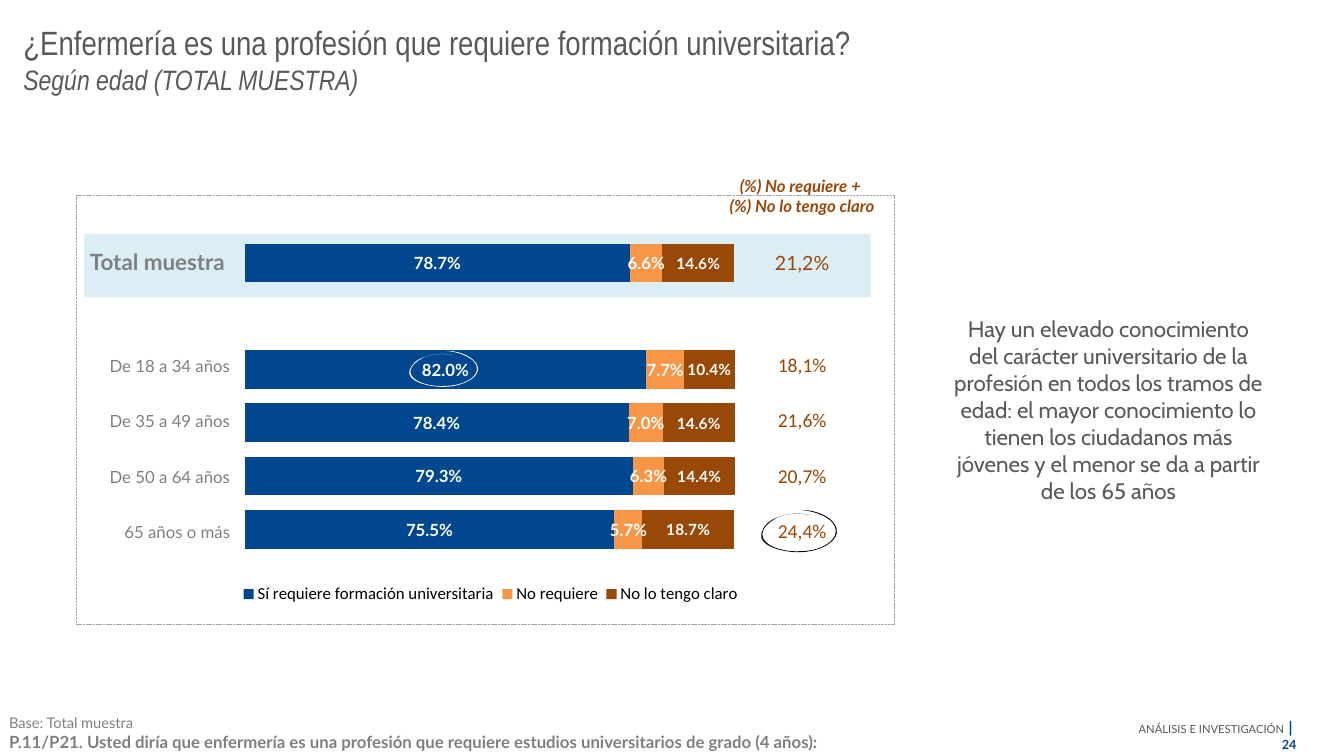
from dataclasses import dataclass
from typing import Any

from lxml.etree import SubElement as Sub
from pptx import Presentation
from pptx.chart.data import CategoryChartData as Data
from pptx.dml.color import RGBColor
from pptx.enum.chart import XL_CHART_TYPE as Kind
from pptx.enum.chart import XL_LABEL_POSITION as Spot
from pptx.enum.chart import XL_LEGEND_POSITION as Side
from pptx.enum.dml import MSO_LINE as Dash
from pptx.enum.shapes import MSO_SHAPE as Form
from pptx.enum.text import MSO_ANCHOR as Anchor
from pptx.enum.text import PP_ALIGN as Align
from pptx.oxml.ns import qn
from pptx.util import Cm, Pt

BLUE = RGBColor(0x00, 0x47, 0x8F)
ORANGE = RGBColor(0xF7, 0x96, 0x46)
BROWN = RGBColor(0x98, 0x48, 0x07)
GRAY = RGBColor(0x80, 0x80, 0x80)
DARK = RGBColor(0x59, 0x59, 0x59)
EDGE = RGBColor(0xA6, 0xA6, 0xA6)
PALE = RGBColor(0xDB, 0xEE, 0xF4)
WHITE = RGBColor(0xFF, 0xFF, 0xFF)
BLACK = RGBColor(0x00, 0x00, 0x00)
BARE = "{2D5ABB26-0587-4C30-8999-92F81FD0307C}"

RING = [(52, 5), (41, 3), (30, 3), (20, 7), (11, 10), (5, 16), (3, 23),
        (0, 36), (24, 42), (40, 42), (58, 42), (76, 34), (78, 23),
        (80, 11), (62, 0), (43, 0), (42, 0), (42, 0), (43, 0),
        (61, 2), (78, 10), (77, 22), (76, 33), (59, 41), (42, 41),
        (25, 42), (4, 36), (4, 24), (4, 18), (11, 12), (18, 8),
        (28, 3), (40, 3), (52, 5)]


@dataclass
class Box:
    x: float
    y: float
    w: float
    h: float

    def place(self) -> tuple:
        return Cm(self.x), Cm(self.y), Cm(self.w), Cm(self.h)


@dataclass
class Run:
    text: str
    size: float
    color: RGBColor
    name: str = "Lato"
    bold: bool = False
    slant: bool = False


@dataclass
class Bar:
    name: str
    vals: tuple
    color: RGBColor
    size: float


def put(obj: Any, vals: dict) -> None:
    for key, val in vals.items():
        setattr(obj, key, val)


def style(font: Any, run: Run) -> None:
    put(font, {"size": Pt(run.size), "name": run.name,
               "bold": run.bold, "italic": run.slant})
    font.color.rgb = run.color


def write(frame: Any, lines: list, align: Align, anchor: Anchor) -> None:
    put(frame, {"word_wrap": True, "vertical_anchor": anchor})
    for i, line in enumerate(lines):
        para = frame.add_paragraph() if i else frame.paragraphs[0]
        para.alignment = align
        for run in line:
            for j, part in enumerate(run.text.split("\n")):
                if j:
                    para.add_line_break()
                if part:
                    piece = para.add_run()
                    piece.text = part
                    style(piece.font, run)


def add_text(shapes: Any, box: Box, lines: list, align: Align, anchor: Anchor) -> Any:
    frame = shapes.add_textbox(*box.place()).text_frame
    write(frame, lines, align, anchor)
    return frame


def add_rect(shapes: Any, box: Box, fill: RGBColor | None) -> Any:
    rect = shapes.add_shape(Form.RECTANGLE, *box.place())
    rect.shadow.inherit = False
    rect.line.fill.background()
    if fill is None:
        rect.fill.background()
    else:
        rect.fill.solid()
        rect.fill.fore_color.rgb = fill
    return rect


def add_grid(shapes: Any, box: Box, rows: list, runs: list, align: Align) -> None:
    item = shapes.add_table(len(rows), 1, *box.place())
    grid = item.table
    put(grid, {"first_row": False, "horz_banding": False})
    next(item._element.iter(qn("a:tableStyleId"))).text = BARE
    for i, (high, run) in enumerate(zip(rows, runs)):
        grid.rows[i].height = Cm(high)
        cell = grid.cell(i, 0)
        cell.fill.background()
        put(cell, {"margin_left": Cm(0.03), "margin_right": Cm(0.03),
                   "margin_top": Cm(0.03), "margin_bottom": 0})
        if run:
            write(cell.text_frame, [[run]], align, Anchor.MIDDLE)
        cell.vertical_anchor = Anchor.MIDDLE


def add_ring(shapes: Any, box: Box, color: RGBColor) -> None:
    x, y, w, h = box.place()
    pen = shapes.build_freeform(*RING[0], scale=(w / 80, h / 43))
    pen.add_line_segments(RING[1:], close=True)
    ring = pen.convert_to_shape(x, y)
    ring.shadow.inherit = False
    ring.fill.solid()
    ring.fill.fore_color.rgb = color
    ring.line.fill.background()
    steps = list(ring._element.iter(qn("a:lnTo")))
    for i in range(0, len(steps), 3):
        trio = steps[i:i + 3]
        curve = Sub(trio[0].getparent(), qn("a:cubicBezTo"))
        trio[0].addprevious(curve)
        for step in trio:
            curve.append(step[0])
            step.getparent().remove(step)


def set_out(node: Any, inner: bool, box: Box) -> None:
    for old in node.findall(qn("c:layout")):
        node.remove(old)
    lay = Sub(node, qn("c:layout"))
    node.remove(lay)
    node.insert(1 if node.tag == qn("c:legend") else 0, lay)
    hand = Sub(lay, qn("c:manualLayout"))
    tags = [("layoutTarget", "inner")] if inner else []
    tags += [("xMode", "edge"), ("yMode", "edge")]
    tags += [(key, str(getattr(box, key))) for key in "xywh"]
    for tag, val in tags:
        Sub(hand, qn("c:" + tag)).set("val", val)


def add_bars(shapes: Any, box: Box, bars: list) -> None:
    data = Data()
    data.categories = ["1", "2", "3", "4", "5", "6"]
    for bar in bars:
        data.add_series(bar.name, bar.vals)
    chart = shapes.add_chart(Kind.BAR_STACKED, *box.place(), data).chart
    put(chart, {"has_legend": True, "has_title": False})
    style(chart.font, Run("", 10, BLACK, "Calibri"))
    put(chart.category_axis, {"visible": False, "reverse_order": True})
    put(chart.value_axis, {"visible": False, "minimum_scale": 0,
                           "maximum_scale": 100, "has_major_gridlines": False})
    plot = chart.plots[0]
    put(plot, {"gap_width": 37, "overlap": 100, "vary_by_categories": False})
    for bar, row in zip(bars, plot.series):
        row.format.fill.solid()
        row.format.fill.fore_color.rgb = bar.color
        tags = row.data_labels
        put(tags, {"show_value": True, "position": Spot.CENTER,
                   "number_format": "0.0\\%", "number_format_is_linked": False})
        style(tags.font, Run("", bar.size, WHITE, bold=True))
    put(chart.legend, {"position": Side.RIGHT, "include_in_layout": False})
    style(chart.legend.font, Run("", 12, BLACK, "Calibri"))
    root = chart._chartSpace.chart
    set_out(root.plotArea, True, Box(0.018, 0.004, 0.95, 0.836))
    set_out(chart.legend._element, False, Box(0, 0.9, 0.99, 0.08))


def main() -> None:
    deck = Presentation()
    put(deck, {"slide_width": Cm(33.87), "slide_height": Cm(19.05)})
    shapes = deck.slides.add_slide(deck.slide_layouts[6]).shapes

    add_text(shapes, Box(28.07, 18.16, 4.85, 0.74), [[
        Run("ANÁLISIS E INVESTIGACIÓN", 8, DARK), Run(" ", 11, DARK),
        Run("| \n", 11, BLUE, bold=True), Run("24", 9, BLUE, bold=True)]],
        Align.RIGHT, Anchor.MIDDLE)
    rim = add_rect(shapes, Box(1.92, 4.93, 20.62, 10.8), None).line
    rim.color.rgb = EDGE
    put(rim, {"width": Pt(0.25), "dash_style": Dash.SQUARE_DOT})
    add_rect(shapes, Box(2.12, 5.89, 19.82, 1.6), PALE)
    add_text(shapes, Box(0.34, 0.43, 29.01, 2.13), [[
        Run("¿Enfermería es una profesión que requiere formación universitaria?\n",
            24, DARK, "Arial Narrow"),
        Run("Según edad (TOTAL MUESTRA)", 20, DARK, "Arial Narrow", slant=True)]],
        Align.LEFT, Anchor.MIDDLE)

    add_bars(shapes, Box(5.93, 5.92, 13, 9.63), [
        Bar("Sí requiere formación universitaria",
            (78.7, None, 82, 78.4, 79.3, 75.5), BLUE, 12),
        Bar("No requiere", (6.6, None, 7.7, 7, 6.3, 5.7), ORANGE, 12),
        Bar("No lo tengo claro", (14.6, None, 10.4, 14.6, 14.4, 18.7), BROWN, 11)])

    ages = ["De 18 a 34 años", "De 35 a 49 años", "De 50 a 64 años", "65 años o más"]
    add_grid(shapes, Box(1.54, 5.96, 4.29, 8.14), [1.27] * 2 + [1.4] * 4,
             [Run("Total muestra ", 16, GRAY, bold=True), None]
             + [Run(age, 12, GRAY) for age in ages], Align.RIGHT)
    sums = ["18,1%", "21,6%", "20,7%", "24,4%"]
    head = "(%) No requiere + \n(%) No lo tengo claro"
    add_grid(shapes, Box(17.94, 3.93, 4.55, 10.17), [1.98, 1.4, 1.19] + [1.4] * 4,
             [Run(head, 12, BROWN, bold=True, slant=True), Run("21,2%", 14, BROWN), None]
             + [Run(val, 14, BROWN, "Calibri") for val in sums], Align.CENTER)

    base = add_text(shapes, Box(0, 17.88, 27.94, 1.17), [
        [Run("Base: Total muestra", 10.5, GRAY)],
        [Run("P.11/P21. Usted diría que enfermería es una profesión que requiere "
             "estudios universitarios de grado (4 años):", 12, GRAY, bold=True)]],
        Align.LEFT, Anchor.BOTTOM)
    put(base, {"margin_left": Cm(0.23), "margin_right": Cm(0.23),
               "margin_top": Cm(0.11), "margin_bottom": Cm(0.11)})
    note = add_rect(shapes, Box(23.73, 6.98, 8.41, 6.68), WHITE).text_frame
    write(note, [[Run(
        "Hay un elevado conocimiento del carácter universitario de la profesión en "
        "todos los tramos de edad: el mayor conocimiento lo tienen los ciudadanos más "
        "jóvenes y el menor se da a partir de los 65 años", 16, DARK, "Cabin")]],
        Align.CENTER, Anchor.MIDDLE)
    note.paragraphs[0].space_after = Pt(6)
    add_ring(shapes, Box(10.25, 8.84, 1.84, 0.93), WHITE)
    add_ring(shapes, Box(19.11, 12.85, 2.03, 1.09), BLACK)
    deck.save("out.pptx")


if __name__ == "__main__":
    main()
